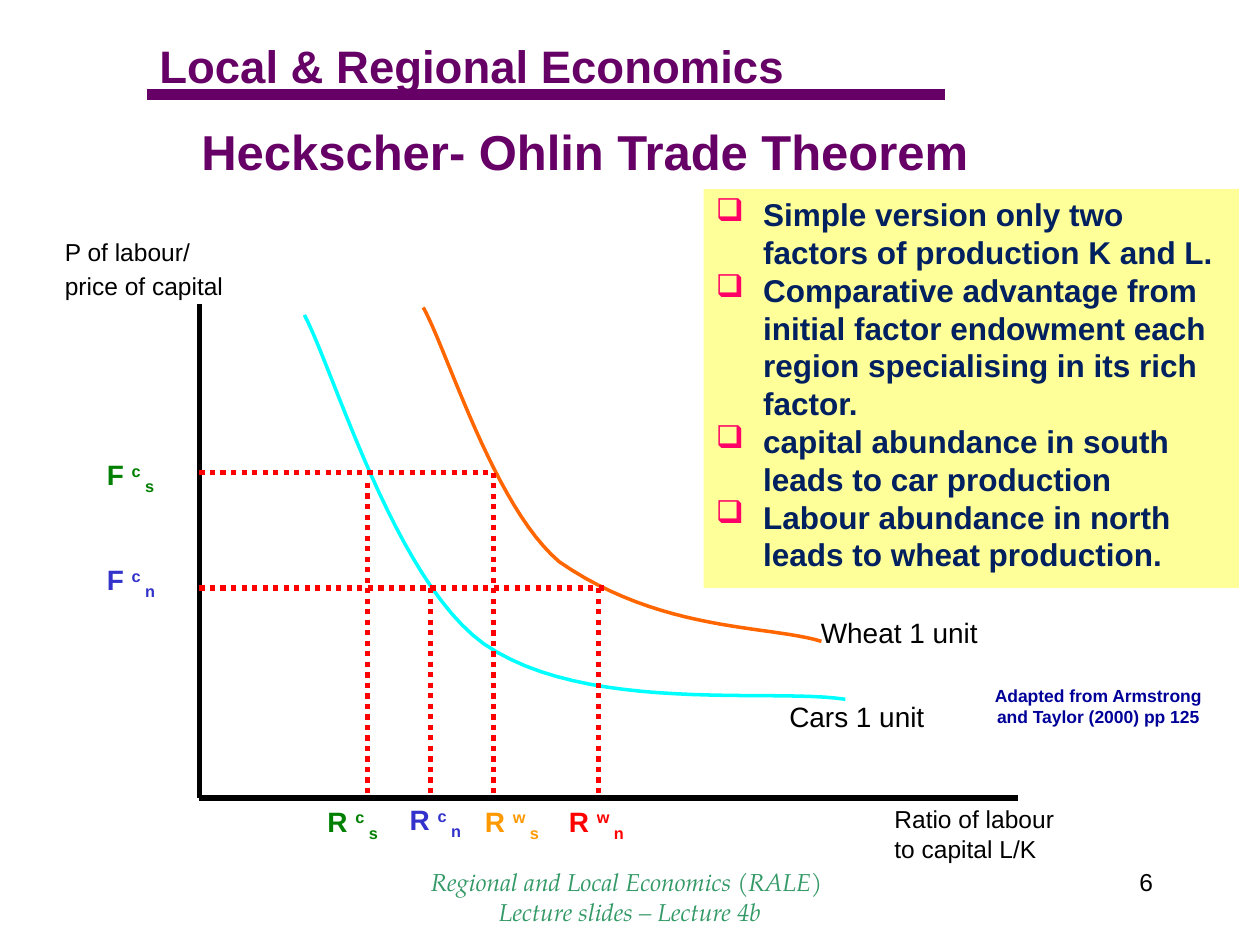
from lxml import etree
from pptx import Presentation
from pptx.dml.color import RGBColor
from pptx.enum.dml import MSO_LINE
from pptx.enum.shapes import MSO_CONNECTOR, MSO_SHAPE
from pptx.enum.text import MSO_ANCHOR, PP_ALIGN
from pptx.oxml.ns import qn
from pptx.util import Pt

STRAIGHT = MSO_CONNECTOR.STRAIGHT
RECTANGLE = MSO_SHAPE.RECTANGLE
DOTTED = MSO_LINE.ROUND_DOT
TOP = MSO_ANCHOR.TOP
LEFT, CENTER, RIGHT = PP_ALIGN.LEFT, PP_ALIGN.CENTER, PP_ALIGN.RIGHT

PURPLE, BLACK, RED = "660066", "000000", "FF0000"
GREEN, BLUE, AMBER = "008000", "3333CC", "FF9900"
CYAN, ORANGE = "00FFFF", "FF6600"

AXIS_X, AXIS_Y = 114, 456
SOUTH_PRICE, NORTH_PRICE = 270, 336


def color(value):
    return RGBColor.from_string(value)


def curve_points(start, segments, steps=24):
    points = [start]
    for first, second, end in segments:
        origin = points[-1]
        for step in range(1, steps + 1):
            t = step / steps
            u = 1 - t
            points.append(tuple(
                u**3 * a + 3 * u * u * t * b + 3 * u * t * t * c + t**3 * d
                for a, b, c, d in zip(origin, first, second, end)))
    return points


class SlideBuilder:
    font_name = "Arial"

    def __init__(self, slide):
        self.slide = slide

    def style(self, font, shade, **values):
        for name, value in ({"name": self.font_name} | values).items():
            setattr(font, name, Pt(value) if name == "size" else value)
        font.color.rgb = color(shade)

    def text(self, frame, lines, shade, align=LEFT, wrap=True, bullet=None, **values):
        frame.word_wrap = wrap
        frame.vertical_anchor = TOP
        for index, line in enumerate(lines):
            para = frame.paragraphs[0] if index == 0 else frame.add_paragraph()
            para.alignment = align
            if bullet:
                self.bullet(para, bullet)
            span = para.add_run()
            span.text = line
            self.style(span.font, shade, **values)

    def bullet(self, para, shade):
        properties = para._p.get_or_add_pPr()
        properties.set("marL", str(Pt(27)))
        properties.set("indent", str(-Pt(27)))
        tint = etree.SubElement(properties, qn("a:buClr"))
        etree.SubElement(tint, qn("a:srgbClr"), val=shade)
        etree.SubElement(properties, qn("a:buChar"), char="❑")

    def label(self, place, lines, shade, **values):
        box = self.slide.shapes.add_textbox(*map(Pt, place))
        self.text(box.text_frame, lines, shade, **values)
        return box

    def symbol(self, place, letter, upper, lower, shade):
        box = self.slide.shapes.add_textbox(*map(Pt, place))
        box.text_frame.word_wrap = False
        para = box.text_frame.paragraphs[0]
        for part, shift in ((letter, 0), (upper, 30000), (lower, -25000)):
            span = para.add_run()
            span.text = part if part == lower else part + " "
            self.style(span.font, shade, size=16, bold=True)
            if shift:
                span._r.get_or_add_rPr().set("baseline", str(shift))

    def line(self, start, end, shade, width=3, dash=None):
        connector = self.slide.shapes.add_connector(
            STRAIGHT, *map(Pt, start + end))
        connector.line.color.rgb = color(shade)
        connector.line.width = Pt(width)
        if dash:
            connector.line.dash_style = dash
        etree.SubElement(connector._element.spPr, qn("a:effectLst"))

    def curve(self, start, segments, shade):
        points = [(Pt(x), Pt(y)) for x, y in curve_points(start, segments)]
        builder = self.slide.shapes.build_freeform(*points[0])
        builder.add_line_segments(points[1:], close=False)
        shape = builder.convert_to_shape()
        shape.shadow.inherit = False
        shape.fill.background()
        shape.line.color.rgb = color(shade)
        shape.line.width = Pt(2)

    def panel(self, place, lines, fill, shade, **values):
        shape = self.slide.shapes.add_shape(RECTANGLE, *map(Pt, place))
        shape.shadow.inherit = False
        shape.fill.solid()
        shape.fill.fore_color.rgb = color(fill)
        shape.line.fill.background()
        self.text(shape.text_frame, lines, shade, **values)


def main():
    deck = Presentation()
    deck.slide_width, deck.slide_height = Pt(720), Pt(540)
    page = SlideBuilder(deck.slides.add_slide(deck.slide_layouts[6]))

    page.label((84, 18, 462, 39), ["Local & Regional Economics"], PURPLE,
               size=26, bold=True)
    page.line((84, 54), (540, 54), PURPLE, width=6)
    page.label((108, 66, 474, 41), ["Heckscher- Ohlin Trade Theorem"], PURPLE,
               size=28, bold=True)

    page.line((AXIS_X, 174), (AXIS_X, AXIS_Y), BLACK)
    page.line((AXIS_X, AXIS_Y), (582, AXIS_Y), BLACK)
    price = page.label((30, 132, 108, 42), ["P of labour/", "price of capital"],
                       BLACK, size=14)
    second = price.text_frame.paragraphs[1]
    second.line_spacing, second.space_before = 0.6, Pt(8.5)
    page.label((504, 456, 109, 41), ["Ratio of labour", "to capital L/K"],
               BLACK, wrap=False, size=14)

    page.curve((174, 180), [
        ((190.8, 211.7), (225.4, 331.2), (276.5, 367.9)),
        ((334.8, 408.2), (440.6, 393.1), (483.1, 399.6))], CYAN)
    page.curve((241.9, 175.7), [
        ((255.6, 200.2), (282.2, 289.4), (319.7, 321.1)),
        ((378, 361.4), (438.5, 357.1), (469.4, 366.5))], ORANGE)
    page.label((444, 396, 92, 27), ["Cars 1 unit"], BLACK, wrap=False, size=16)
    page.label((462, 348, 104, 27), ["Wheat 1 unit"], BLACK, wrap=False, size=16)

    for y, stops in ((SOUTH_PRICE, (AXIS_X, 210, 282)),
                     (NORTH_PRICE, (AXIS_X, 246, 348))):
        for left, right in zip(stops, stops[1:]):
            page.line((left, y), (right, y), RED, dash=DOTTED)
    for x, top in ((210, 276), (246, NORTH_PRICE),
                   (282, SOUTH_PRICE), (342, NORTH_PRICE)):
        page.line((x, top), (x, AXIS_Y), RED, dash=DOTTED)

    for left, top, width, letter, upper, lower, shade in (
            (54, 258, 48, "F", "c", "s", GREEN),
            (54, 318, 46, "F", "c", "n", BLUE),
            (180, 456, 48, "R", "c", "s", GREEN),
            (227, 455, 48, "R", "c", "n", BLUE),
            (270, 456, 54, "R", "w", "s", AMBER),
            (318, 456, 50, "R", "w", "n", RED)):
        page.symbol((left, top, width, 27), letter, upper, lower, shade)

    page.panel((402, 108, 306, 228), [
        "Simple version only two factors of production K and L.",
        "Comparative advantage from initial factor endowment each region "
        "specialising in its rich factor.",
        "capital abundance in south leads to car production",
        "Labour abundance in north leads to wheat production.",
    ], "FFFF99", "002060", bullet="FF0066", size=18, bold=True)

    page.label((551.5, 388, 152, 32),
               ["Adapted from Armstrong and Taylor (2000) pp 125"], "000099",
               align=CENTER, size=10, bold=True)
    page.label((204, 492, 312, 36),
               ["Regional and Local Economics (RALE) ", "Lecture slides – Lecture 4b"],
               "339966", align=CENTER, name="TeX Gyre Pagella", size=14, italic=True)
    page.label((516, 492, 150, 36), ["6"], BLACK, align=RIGHT, size=14)

    deck.save("out.pptx")


if __name__ == "__main__":
    main()
